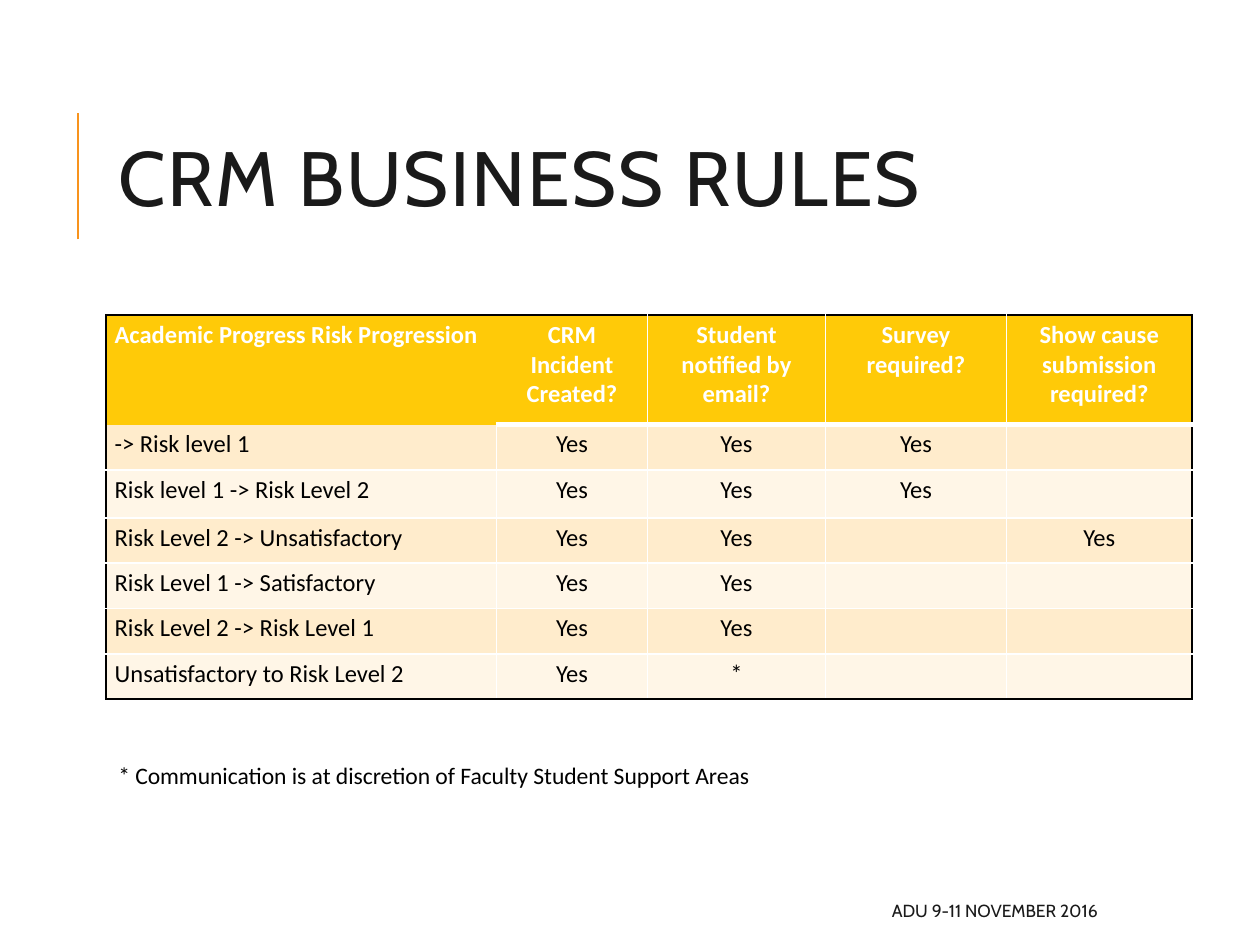
from dataclasses import dataclass

from pptx import Presentation
from pptx.dml.color import RGBColor as Color
from pptx.enum.shapes import MSO_CONNECTOR as Connector
from pptx.enum.text import MSO_ANCHOR as Anchor, PP_ALIGN as Align
from pptx.oxml.ns import qn
from pptx.util import Inches, Pt
from lxml.etree import SubElement


@dataclass(frozen=True)
class Theme:
    heading_font: str = "Cabin"
    body_font: str = "Calibri"
    ink: str = "1A1A1A"
    black: str = "000000"
    white: str = "FFFFFF"
    accent: str = "F8931D"
    header: str = "FFCA08"
    bands: tuple = ("FFECCC", "FFF6E7")
    title_size: float = 44
    table_size: float = 14
    note_size: float = 13.5
    footer_size: float = 10


def write_text(frame, text, *, font, size, color, bold=False, align=Align.LEFT,
               line_spacing=None, tracking=None):
    paragraph = frame.paragraphs[0]
    paragraph.alignment = align
    if line_spacing:
        paragraph.line_spacing = line_spacing
    if not text:
        SubElement(paragraph._p, qn("a:endParaRPr"), sz=str(int(size * 100)))
        return
    run = paragraph.add_run()
    run.text = text
    run.font.name = font
    run.font.size = Pt(size)
    run.font.bold = bold
    run.font.color.rgb = Color.from_string(color)
    if tracking:
        run._r.get_or_add_rPr().set("spc", str(int(tracking * 100)))


class SlideBuilder:
    def __init__(self, slide, theme):
        self.slide = slide
        self.theme = theme

    def line(self, start, end, color, width):
        connector = self.slide.shapes.add_connector(
            Connector.STRAIGHT, *map(Inches, start + end))
        connector.line.color.rgb = Color.from_string(color)
        connector.line.width = Pt(width)
        SubElement(connector._element.spPr, qn("a:effectLst"))

    def text(self, box, text, anchor=Anchor.TOP, **style):
        shape = self.slide.shapes.add_textbox(*map(Inches, box))
        frame = shape.text_frame
        frame.word_wrap = True
        frame.vertical_anchor = anchor
        write_text(frame, text, **style)

    def border(self, cell, side, color, width):
        properties = cell._tc.get_or_add_tcPr()
        line = SubElement(properties, qn(f"a:ln{side}"), w=str(Pt(width)))
        if color is None:
            SubElement(line, qn("a:noFill"))
        else:
            fill = SubElement(line, qn("a:solidFill"))
            SubElement(fill, qn("a:srgbClr"), val=color)

    def cell_borders(self, cell, row, column, last_row, last_column):
        black, white = self.theme.black, self.theme.white
        corner = row == 0 and column == 0
        left = black if column == 0 else None if (row, column) == (0, 1) else white
        right = black if column == last_column else None if corner else white
        top = black if row == 0 else None if (row, column) == (1, 0) else white
        bottom = black if row == last_row else None if corner else white
        self.border(cell, "L", left, 1)
        self.border(cell, "R", right, 1)
        self.border(cell, "T", top, 3 if row == 1 else 1)
        self.border(cell, "B", bottom, 3 if row == 0 else 1)

    def table(self, left, top, widths, heights, rows):
        theme = self.theme
        frame = self.slide.shapes.add_table(
            len(rows), len(widths), Inches(left), Inches(top),
            Inches(sum(widths)), Inches(sum(heights)))
        table = frame.table
        for column, width in zip(table.columns, widths):
            column.width = Inches(width)
        for row, height in zip(table.rows, heights):
            row.height = Inches(height)
        for r, values in enumerate(rows):
            is_header = r == 0
            fill = theme.header if is_header else theme.bands[(r - 1) % 2]
            for c, value in enumerate(values):
                cell = table.cell(r, c)
                cell.margin_left = cell.margin_right = Inches(0.07)
                cell.margin_top = cell.margin_bottom = Inches(0.04)
                self.cell_borders(cell, r, c, len(rows) - 1, len(widths) - 1)
                cell.fill.solid()
                cell.fill.fore_color.rgb = Color.from_string(fill)
                write_text(cell.text_frame, value, font=theme.body_font,
                           size=theme.table_size, bold=is_header,
                           color=theme.white if is_header else theme.black,
                           align=Align.CENTER if c else Align.LEFT)


RULES = [
    ("Academic Progress Risk Progression", "CRM Incident Created?",
     "Student notified by email?", "Survey required?",
     "Show cause submission required?"),
    ("-> Risk level 1", "Yes", "Yes", "Yes", ""),
    ("Risk level 1 -> Risk Level 2", "Yes", "Yes", "Yes", ""),
    ("Risk Level 2 -> Unsatisfactory", "Yes", "Yes", "", "Yes"),
    ("Risk Level 1 -> Satisfactory", "Yes", "Yes", "", ""),
    ("Risk Level 2 -> Risk Level 1", "Yes", "Yes", "", ""),
    ("Unsatisfactory to Risk Level 2", "Yes", "*", "", ""),
]


def main():
    presentation = Presentation()
    presentation.slide_width = Inches(10)
    presentation.slide_height = Inches(7.5)
    slide = presentation.slides.add_slide(presentation.slide_layouts[6])
    theme = Theme()
    builder = SlideBuilder(slide, theme)

    builder.line((0.62, 1.9), (0.62, 0.9), theme.accent, 1.5)
    builder.text((0.84, 0.64, 7.97, 1.64), "CRM BUSINESS RULES", Anchor.MIDDLE,
                 font=theme.heading_font, size=theme.title_size,
                 color=theme.ink, line_spacing=0.8, tracking=1)
    builder.text((3.97, 7.08, 4.84, 0.3), "ADU 9-11 NOVEMBER 2016", Anchor.MIDDLE,
                 font=theme.heading_font, size=theme.footer_size,
                 color=theme.ink, align=Align.RIGHT)
    builder.table(0.84, 2.5, (3.1, 1.2, 1.41, 1.44, 1.47),
                  (0.87, 0.36, 0.38) + (0.36,) * 4, RULES)
    builder.text((0.84, 5.99, 8.62, 0.33),
                 "* Communication is at discretion of Faculty Student Support Areas",
                 font=theme.body_font, size=theme.note_size, color=theme.black)

    presentation.save("out.pptx")


if __name__ == "__main__":
    main()
